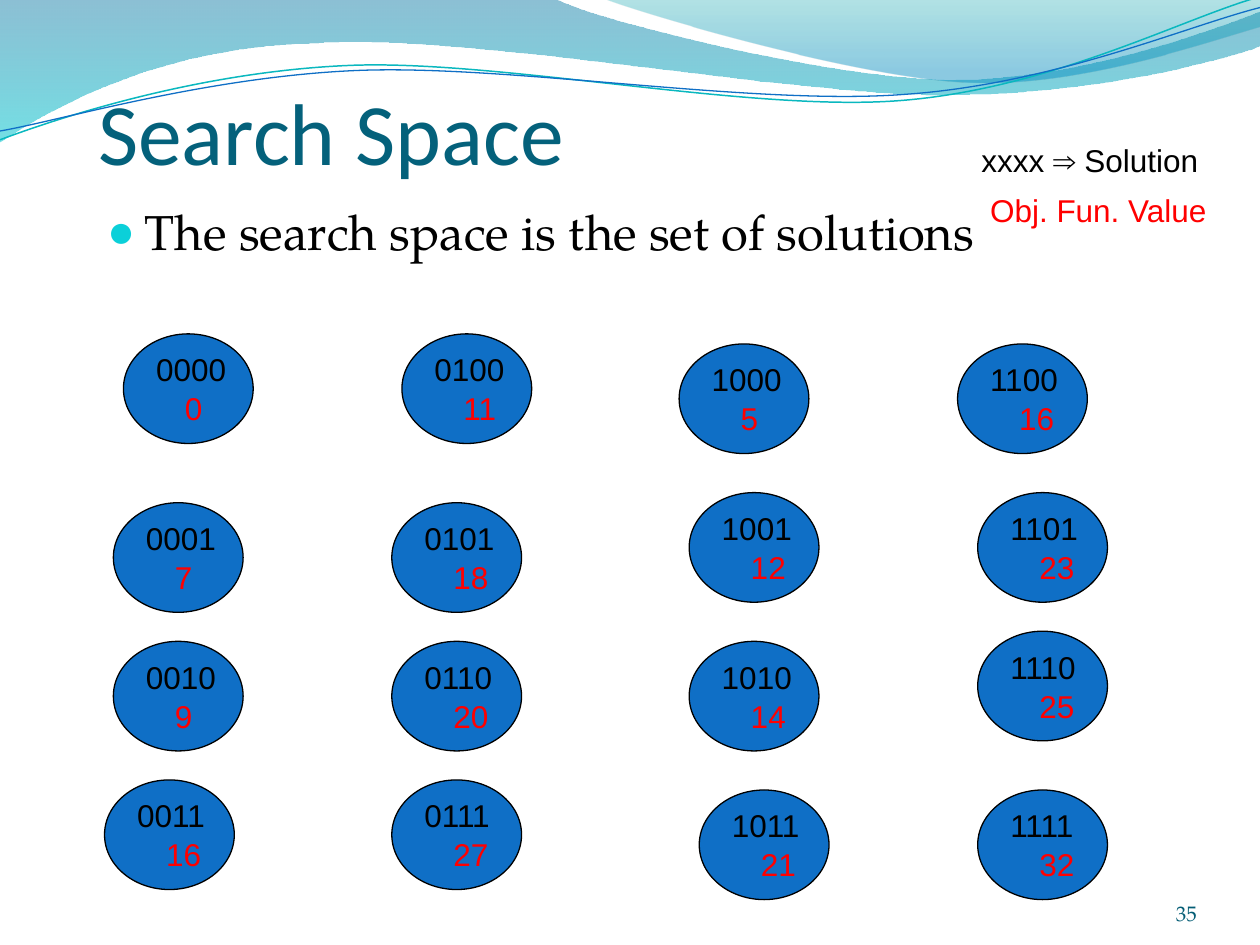
"""Build the Search Space slide: sixteen bit strings with their objective values."""
from itertools import product

from lxml import etree
from pptx import Presentation
from pptx.dml.color import RGBColor
from pptx.enum.shapes import MSO_SHAPE
from pptx.enum.text import MSO_ANCHOR, MSO_AUTO_SIZE, PP_ALIGN
from pptx.oxml.ns import qn
from pptx.util import Cm, Pt

OVAL = MSO_SHAPE.OVAL
TOP, BOTTOM = MSO_ANCHOR.TOP, MSO_ANCHOR.BOTTOM
FIXED, GROW = MSO_AUTO_SIZE.NONE, MSO_AUTO_SIZE.SHAPE_TO_FIT_TEXT
LEFT, RIGHT = PP_ALIGN.LEFT, PP_ALIGN.RIGHT

BLACK = RGBColor(0x00, 0x00, 0x00)
RED = RGBColor(0xFF, 0x00, 0x00)
BLUE = RGBColor(0x0F, 0x6F, 0xC6)
TEAL = RGBColor(0x0A, 0xB8, 0xBF)
TITLE_COLOR = RGBColor(0x04, 0x61, 0x7B)
NUMBER_COLOR = RGBColor(0x04, 0x5D, 0x75)
BULLET_COLOR = RGBColor(0x0B, 0xD0, 0xD9)
WAVE_BLUE = RGBColor(0x00, 0x74, 0xA1)
WAVE_CYAN = RGBColor(0x00, 0xC6, 0xCF)
CREST_GREEN = RGBColor(0x00, 0xA1, 0xA9)
CREST_BLUE = RGBColor(0x00, 0x8B, 0xBF)

CM_PER_INCH = 2.54
WEIGHTS = (5, 11, 9, 7)

WAVE = [
    [(0, 0)], [(4.4, -0.01)],
    [(4.76, 0.17), (6.64, 0.63), (7.58, 0.63)],
    [(8.53, 0.63), (9.58, 0.26), (10, 0.09)],
    [(10.01, 0.36)],
    [(9.83, 0.44), (8.7, 0.76), (7.46, 0.75)],
    [(6.22, 0.75), (3.82, 0.28), (2.57, 0.34)],
    [(1.29, 0.36), (0.46, 0.83), (-0.01, 1.13)],
    [(0, 0)],
]
CREST = [
    [(4.79, -0.01)],
    [(5.09, 0.11), (6.82, 0.62), (7.69, 0.65)],
    [(8.56, 0.69), (9.61, 0.32), (10, 0.21)],
    [(10, 0)], [(4.79, -0.01)],
]
TEAL_LINE = [
    [(0, 1.11)],
    [(0.48, 0.93), (1.58, 0.57), (2.77, 0.52)],
    [(3.95, 0.47), (5.93, 0.89), (7.13, 0.8)],
    [(8.33, 0.71), (9.38, 0.15), (9.98, -0.02)],
]
BLUE_LINE = [
    [(0, 1.04)],
    [(0.47, 0.96), (1.64, 0.61), (2.83, 0.56)],
    [(4.03, 0.51), (5.97, 0.84), (7.17, 0.75)],
    [(8.36, 0.67), (9.41, 0.21), (10, 0.06)],
]
NODE_PLACES = [
    (0.98, 2.65), (0.9, 3.99), (0.9, 5.09), (0.83, 6.19),
    (3.19, 2.65), (3.11, 3.99), (3.11, 5.09), (3.11, 6.19),
    (5.39, 2.73), (5.47, 3.91), (5.47, 5.09), (5.55, 6.27),
    (7.6, 2.73), (7.76, 3.91), (7.76, 5.01), (7.76, 6.27),
]


def inches(*values):
    return [Cm(value * CM_PER_INCH) for value in values]


def write_text(box, text, font="Arial", size=18, color=BLACK, align=LEFT, anchor=TOP,
               wrap=True, fit=GROW, insets=None):
    frame = box.text_frame
    frame.word_wrap, frame.auto_size, frame.vertical_anchor = wrap, fit, anchor
    if insets:
        (frame.margin_left, frame.margin_top,
         frame.margin_right, frame.margin_bottom) = inches(*insets)
    para = frame.paragraphs[0]
    para.alignment, para.space_before = align, Pt(0)
    span = para.add_run()
    span.text = text
    span.font.name, span.font.size, span.font.color.rgb = font, Pt(size), color
    return para


class SlideBuilder:
    """Hold the deck style and the current page, and draw each kind of element."""

    heading_font = "Calibri"
    body_font = "TeX Gyre Pagella"

    def __init__(self):
        self.deck = Presentation()
        self.deck.slide_width, self.deck.slide_height = inches(10, 7.5)
        self.page = self.deck.slides.add_slide(self.deck.slide_layouts[1])

    def outline(self, segments, close):
        points = [inches(*point) for segment in segments for point in segment]
        builder = self.page.shapes.build_freeform(*points[0])
        builder.add_line_segments(points[1:], close=close)
        shape = builder.convert_to_shape()
        shape.shadow.inherit = False
        lines = shape._element.spPr.iter(qn("a:lnTo"))
        lines = iter(list(lines))
        for segment in segments[1:]:
            first, *others = [next(lines) for point in segment]
            if others:
                curve = etree.Element(qn("a:cubicBezTo"))
                first.addprevious(curve)
                for line in (first, *others):
                    curve.append(line[0])
                    line.getparent().remove(line)
        return shape

    def band(self, segments, *stops):
        shape = self.outline(segments, True)
        shape.line.fill.background()
        shape.fill.gradient()
        shape.fill.gradient_angle = 270
        for stop, (position, color, opacity) in zip(shape.fill.gradient_stops, stops):
            stop.position, stop.color.rgb = position, color
        for mark, (position, color, opacity) in zip(shape._element.spPr.iter(qn("a:srgbClr")), stops):
            etree.SubElement(mark, qn("a:alpha"), val=str(opacity * 1000))

    def ribbon(self, segments, color, width):
        shape = self.outline(segments, False)
        shape.fill.background()
        shape.line.color.rgb, shape.line.width = color, Pt(width)

    def holder(self, index, *place):
        box = self.page.placeholders[index]
        box.left, box.top, box.width, box.height = inches(*place)
        self.page.shapes._spTree.append(box._element)
        return box

    def title(self, text, *place):
        write_text(self.holder(0, *place), text, font=self.heading_font, size=50,
                   color=TITLE_COLOR, anchor=BOTTOM, fit=FIXED, insets=(0, 0.05, 0, 0))

    def bullet(self, text, *place):
        para = write_text(self.holder(1, *place), text, font=self.body_font, size=28, fit=FIXED)
        properties = para._p.get_or_add_pPr()
        indent = inches(0.3)[0]
        properties.set("marL", str(indent))
        properties.set("indent", str(-indent))
        tint = etree.SubElement(properties, qn("a:buClr"))
        etree.SubElement(tint, qn("a:srgbClr"), val=str(BULLET_COLOR))
        etree.SubElement(properties, qn("a:buSzPct"), val="95000")
        etree.SubElement(properties, qn("a:buChar"), char="●")

    def label(self, text, *place, shapes=None, **style):
        box = (shapes or self.page.shapes).add_textbox(*inches(*place))
        write_text(box, text, **style)

    def node(self, solution, value, left, top):
        shapes = self.page.shapes.add_group_shape().shapes
        circle = shapes.add_shape(OVAL, *inches(left, top, 1.03, 0.87))
        circle.shadow.inherit = False
        circle.fill.solid()
        circle.fill.fore_color.rgb = BLUE
        circle.line.color.rgb, circle.line.width = BLACK, Pt(0.75)
        self.label(solution, left + 0.16, top + 0.08, 0.76, 0.4, shapes=shapes, wrap=False)
        self.label(str(value), left + 0.39, top + 0.39, 0.2 + 0.14 * len(str(value)), 0.4,
                   shapes=shapes, wrap=False, color=RED)


def main():
    slide = SlideBuilder()
    slide.band(WAVE, (0, WAVE_BLUE, 45), (1, WAVE_CYAN, 55))
    slide.band(CREST, (0, CREST_GREEN, 30), (0.8, CREST_BLUE, 45))
    slide.ribbon(TEAL_LINE, TEAL, 0.85)
    slide.ribbon(BLUE_LINE, BLUE, 0.75)
    slide.title("Search Space", 0.78, 0.2, 8.5, 1.25)
    slide.bullet("The search space is the set of solutions", 0.75, 1.55, 8.12, 0.73)
    for bits, place in zip(product((0, 1), repeat=4), NODE_PLACES):
        value = sum(weight * bit for weight, bit in zip(WEIGHTS, bits))
        slide.node("".join(map(str, bits)), value, *place)
    slide.label("Obj. Fun. Value", 7.76, 1.47, 1.97, 0.4, color=RED)
    slide.label("xxxx ⇒ Solution", 7.69, 1.07, 2.12, 0.4)
    slide.label("35", 8.67, 6.95, 0.83, 0.4, font=slide.body_font, size=12, color=NUMBER_COLOR,
                align=RIGHT, anchor=BOTTOM, fit=FIXED, insets=(0, 0, 0, 0))
    slide.deck.save("out.pptx")


if __name__ == "__main__":
    main()
